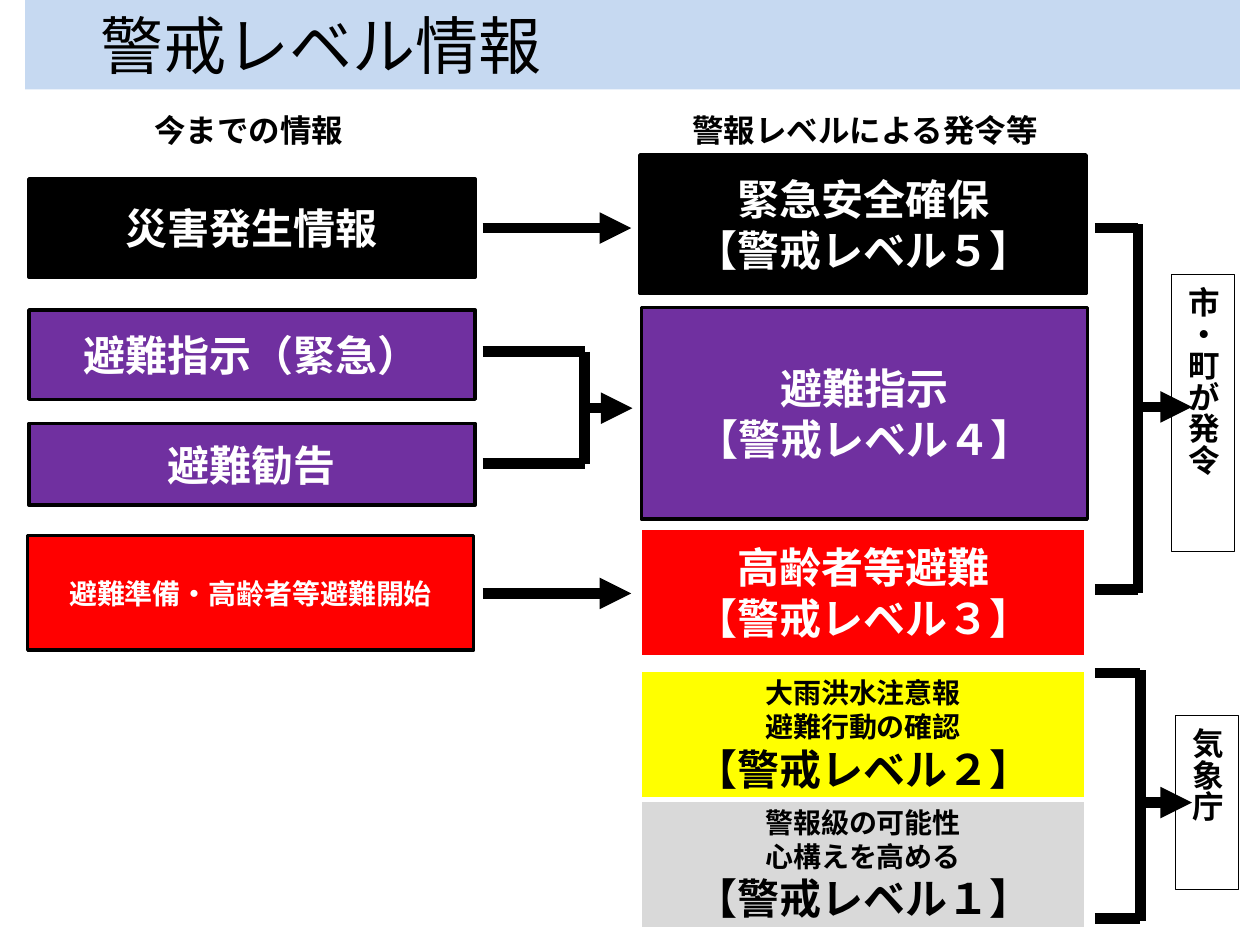
from lxml.etree import SubElement
from pptx import Presentation
from pptx.dml.color import RGBColor
from pptx.enum.shapes import MSO_CONNECTOR, MSO_SHAPE
from pptx.enum.text import MSO_ANCHOR, MSO_AUTO_SIZE, PP_ALIGN
from pptx.oxml.ns import qn
from pptx.util import Inches, Pt

CJK = "Noto Sans CJK JP"
BLACK, WHITE, PURPLE, RED = "000000", "FFFFFF", "7030A0", "FF0000"
YELLOW, GREY, PALE_BLUE = "FFFF00", "D9D9D9", "C6D9F1"


def color(value):
    return RGBColor.from_string(value)


class Board:
    """Draws on one slide; lengths are cells of a 100 by 75 grid."""

    def __init__(self, deck):
        self.column = deck.slide_width / 100
        self.row = deck.slide_height / 75
        self.page = deck.slides.add_slide(deck.slide_layouts[5])

    def area(self, left, top, width, height):
        return (round(left * self.column), round(top * self.row),
                round(width * self.column), round(height * self.row))

    def add_lines(self, box, lines, face, ink=BLACK, bold=True, align=PP_ALIGN.CENTER):
        """Each line is a pair of wording and size in points."""
        frame = box.text_frame
        frame.word_wrap = True
        for number, (words, size) in enumerate(lines):
            para = frame.add_paragraph() if number else frame.paragraphs[0]
            para.alignment = align
            span = para.add_run()
            span.text = words
            span.font.name, span.font.size = face, Pt(size)
            span.font.bold = bold
            span.font.color.rgb = color(ink)
            east_asian = SubElement(span._r.get_or_add_rPr(), qn("a:ea"))
            east_asian.set("typeface", CJK)

    def title(self, words, place, indent):
        box = self.page.shapes.title
        box.left, box.top, box.width, box.height = self.area(*place)
        box.fill.solid()
        box.fill.fore_color.rgb = color(PALE_BLUE)
        frame = box.text_frame
        frame.margin_left = round(indent * self.column)
        frame.vertical_anchor = MSO_ANCHOR.MIDDLE
        frame.auto_size = MSO_AUTO_SIZE.NONE
        self.add_lines(box, [(words, 36)], "Calibri", bold=False, align=PP_ALIGN.LEFT)

    def heading(self, words, place):
        box = self.page.shapes.add_textbox(*self.area(*place))
        box.text_frame.auto_size = MSO_AUTO_SIZE.SHAPE_TO_FIT_TEXT
        self.add_lines(box, [(words, 18)], "Arial")

    def rectangle(self, place, fill, edge, weight):
        box = self.page.shapes.add_shape(MSO_SHAPE.RECTANGLE, *self.area(*place))
        box.shadow.inherit = False
        if fill:
            box.fill.solid()
            box.fill.fore_color.rgb = color(fill)
        else:
            box.fill.background()
        box.line.color.rgb = color(edge)
        box.line.width = Pt(weight)
        box.text_frame.vertical_anchor = MSO_ANCHOR.MIDDLE
        return box

    def level(self, place, fill, edge, ink, lines):
        self.add_lines(self.rectangle(place, fill, edge, 2), lines, CJK, ink)

    def issuer(self, words, place):
        box = self.rectangle(place, None, BLACK, 0.75)
        box.text_frame.auto_size = MSO_AUTO_SIZE.SHAPE_TO_FIT_TEXT
        self.add_lines(box, [(words, 18)], "Arial")
        box.element.txBody.find(qn("a:bodyPr")).set("vert", "eaVert")

    def line(self, x1, y1, x2, y2, arrow=False):
        start, end = self.area(x1, y1, 0, 0)[:2], self.area(x2, y2, 0, 0)[:2]
        stroke = self.page.shapes.add_connector(MSO_CONNECTOR.STRAIGHT, *start, *end)
        stroke.line.color.rgb = color(BLACK)
        stroke.line.width = Pt(6)
        shape_style = stroke.element.spPr
        if arrow:
            SubElement(shape_style.find(qn("a:ln")), qn("a:tailEnd")).set("type", "triangle")
        SubElement(shape_style, qn("a:effectLst"))

    def bracket(self, left, spine, top, bottom, tip, middle, overhang):
        for y in (top, bottom):
            self.line(left, y, spine, y)
        self.line(spine, top - overhang, spine, bottom + overhang)
        self.line(spine, middle, tip, middle, arrow=True)


def main():
    deck = Presentation()
    deck.slide_width, deck.slide_height = Inches(10), Inches(7.5)
    board = Board(deck)

    # Title and column headings
    board.title("警戒レベル情報", (2, 0, 96.4, 7.1), indent=6)
    board.heading("今までの情報", (4, 8.3, 31.5, 4))
    board.heading("警報レベルによる発令等", (52.9, 8.3, 31.5, 4))

    # Former information
    for words, size, left, top, height, fill in (
        ("災害発生情報", 24, 2.3, 14.2, 7.8, BLACK),
        ("避難指示（緊急）", 24, 2.3, 24.6, 7.1, PURPLE),
        ("避難勧告", 24, 2.3, 33.6, 6.5, PURPLE),
        ("避難準備・高齢者等避難開始", 16, 2.2, 42.5, 9.1, RED),
    ):
        board.level((left, top, 35.4, height), fill, BLACK, WHITE, [(words, size)])

    # Alert levels, from five down to one
    for names, number, size, left, top, height, fill, edge, ink in (
        (["緊急安全確保"], "５", 24, 50.8, 12.3, 11, BLACK, BLACK, WHITE),
        (["避難指示"], "４", 24, 50.9, 24.4, 16.8, PURPLE, BLACK, WHITE),
        (["高齢者等避難"], "３", 24, 50.8, 41.9, 10.2, RED, WHITE, WHITE),
        (["大雨洪水注意報", "避難行動の確認"], "２", 16, 50.8, 53.2, 10.2, YELLOW, WHITE, BLACK),
        (["警報級の可能性", "心構えを高める"], "１", 16, 50.8, 63.5, 10.2, GREY, WHITE, BLACK),
    ):
        lines = [(name, size) for name in names] + [(f"【警戒レベル{number}】", 24)]
        board.level((left, top, 35.4, height), fill, edge, ink, lines)

    # Who issues them
    board.issuer("市・町が発令", (93, 21.8, 5, 22))
    board.issuer("気象庁", (93.3, 56.8, 5, 13.8))

    # Arrows from former information to levels
    for y in (18.1, 47.1):
        board.line(38.3, y, 50.1, y, arrow=True)
    board.bracket(38.3, 46.4, 27.9, 36.8, tip=50.2, middle=32.4, overhang=0)

    # Brackets from levels to issuers
    board.bracket(86.9, 90.3, 18.1, 46.8, tip=94.6, middle=32.3, overhang=0.3)
    board.bracket(86.9, 90.5, 53.4, 72.9, tip=94.6, middle=63.7, overhang=0.2)

    deck.save("out.pptx")


if __name__ == "__main__":
    main()
